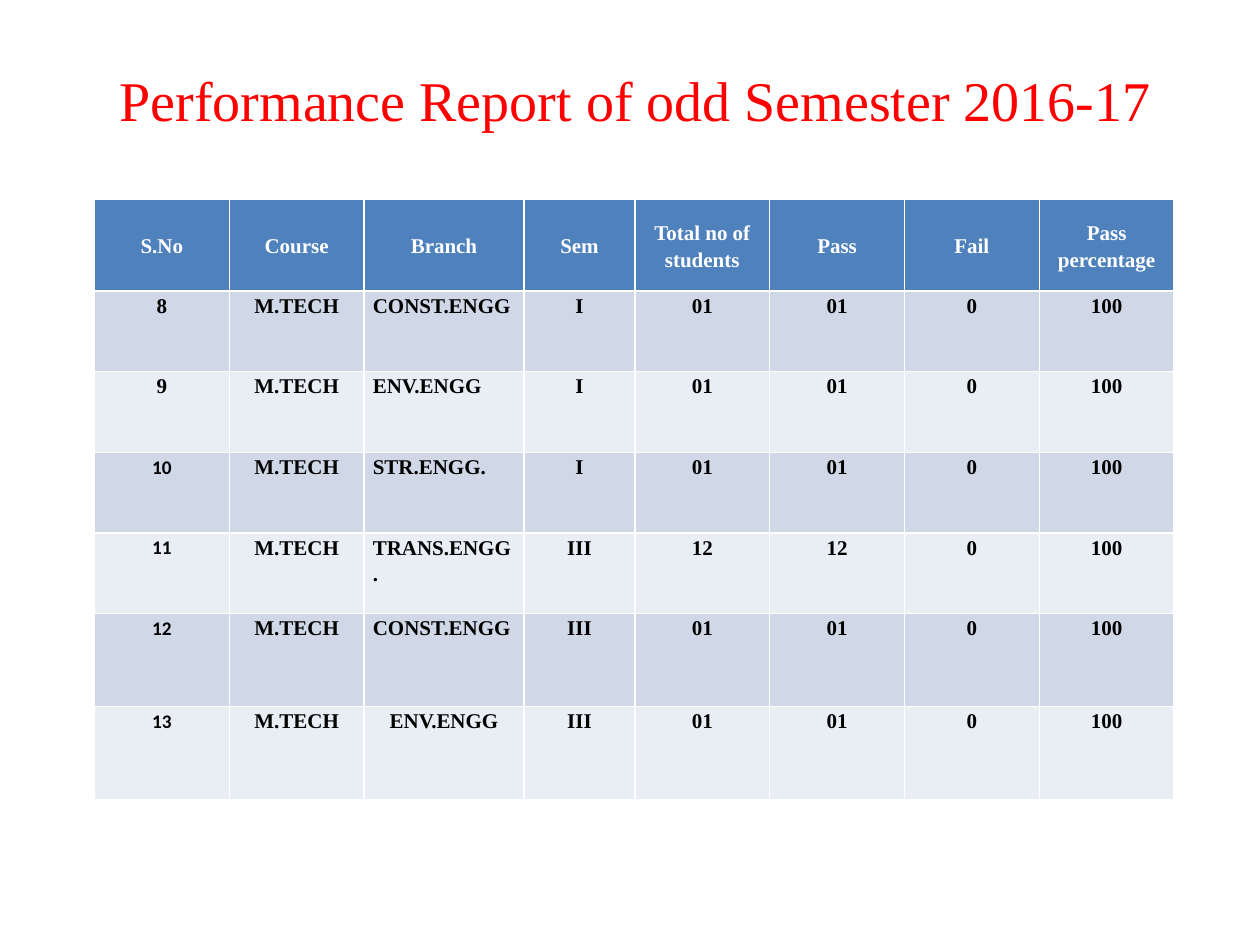
import pptx
import pptx.util
import pptx.dml.color
import pptx.enum.text

Inches = pptx.util.Inches
Pt = pptx.util.Pt
ALIGN = pptx.enum.text.PP_ALIGN
ANCHOR = pptx.enum.text.MSO_ANCHOR

COLORS = {
    "title": "FF0000",
    "header": "4F81BD",
    "header_text": "FFFFFF",
    "odd": "D0D8E8",
    "even": "E9EDF4",
    "text": "000000",
}
HEADERS = ["S.No", "Course", "Branch", "Sem", "Total no of students",
           "Pass", "Fail", "Pass percentage"]
RESULTS = [
    ("8", "CONST.ENGG", "I", "01"),
    ("9", "ENV.ENGG", "I", "01"),
    ("10", "STR.ENGG.", "I", "01"),
    ("11", "TRANS.ENGG.", "III", "12"),
    ("12", "CONST.ENGG", "III", "01"),
    ("13", "ENV.ENGG", "III", "01"),
]
COL_WIDTHS = [1.07, 1.07, 1.27, 0.88] + [1.07] * 4
ROW_HEIGHTS = [0.73] + [0.64] * 4 + [0.74] * 2


class ReportSlide:
    """Holds the style and the current slide, and adds elements to it."""

    def __init__(self, prs, font="Times New Roman"):
        self.font = font
        self.s = prs.slides.add_slide(prs.slide_layouts[5])

    def style(self, p, size, color, align, bold=None, font=None):
        p.alignment = align
        for r in p.runs:
            r.font.name = font or self.font
            r.font.size = Pt(size)
            r.font.bold = bold
            r.font.color.rgb = pptx.dml.color.RGBColor.from_string(COLORS[color])

    def title(self, text, left, top, width, height):
        sp = self.s.shapes.title
        sp.left, sp.top = Inches(left), Inches(top)
        sp.width, sp.height = Inches(width), Inches(height)
        tf = sp.text_frame
        tf.text = text
        tf.vertical_anchor = ANCHOR.MIDDLE
        tf.margin_bottom = Inches(0.72)
        self.style(tf.paragraphs[0], 32, "title", ALIGN.CENTER)

    def cell(self, cell, text, fill, color, align=ALIGN.CENTER, size=12, font=None):
        cell.fill.solid()
        cell.fill.fore_color.rgb = pptx.dml.color.RGBColor.from_string(COLORS[fill])
        cell.margin_left = cell.margin_right = Inches(0.07)
        cell.margin_top = cell.margin_bottom = 0
        cell.text_frame.text = text
        p = cell.text_frame.paragraphs[0]
        p.line_spacing = 1.15
        self.style(p, size, color, align, True, font)
        return p

    def table(self, left, top):
        table = self.s.shapes.add_table(
            len(ROW_HEIGHTS), len(COL_WIDTHS), Inches(left), Inches(top),
            Inches(sum(COL_WIDTHS)), Inches(sum(ROW_HEIGHTS))).table
        for column, width in zip(table.columns, COL_WIDTHS):
            column.width = Inches(width)
        for row, height in zip(table.rows, ROW_HEIGHTS):
            row.height = Inches(height)
        for c, text in enumerate(HEADERS):
            cell = table.cell(0, c)
            self.cell(cell, text, "header", "header_text")
            cell.vertical_anchor = ANCHOR.MIDDLE
        for i, (number, branch, sem, students) in enumerate(RESULTS, 1):
            values = [number, "M.TECH", branch, sem, students, students, "0", "100"]
            for c, text in enumerate(values):
                look = {}
                if c == 0 and int(number) >= 10:
                    look = {"size": 11, "font": "Calibri"}
                elif c == 2 and i < len(RESULTS):
                    look = {"align": ALIGN.JUSTIFY}
                p = self.cell(table.cell(i, c), text, "odd" if i % 2 else "even",
                              "text", **look)
                p.space_after = Pt(10)


def main():
    prs = pptx.Presentation()
    prs.slide_width, prs.slide_height = Inches(10), Inches(7.5)
    s = ReportSlide(prs)
    s.title("Performance Report of odd Semester 2016-17", 0.42, 0.25, 9.25, 1.75)
    s.table(0.75, 1.58)
    prs.save("out.pptx")


if __name__ == "__main__":
    main()
